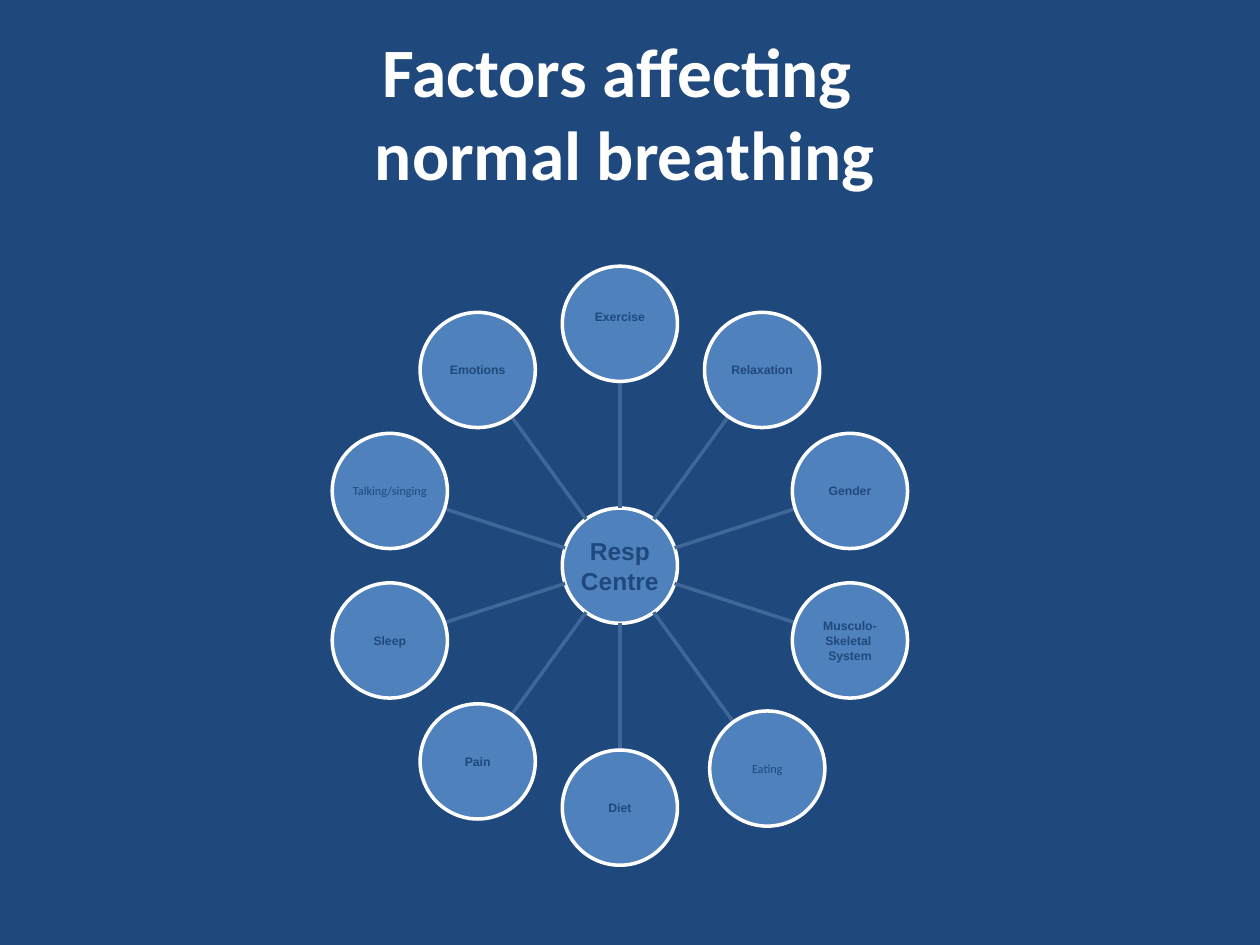
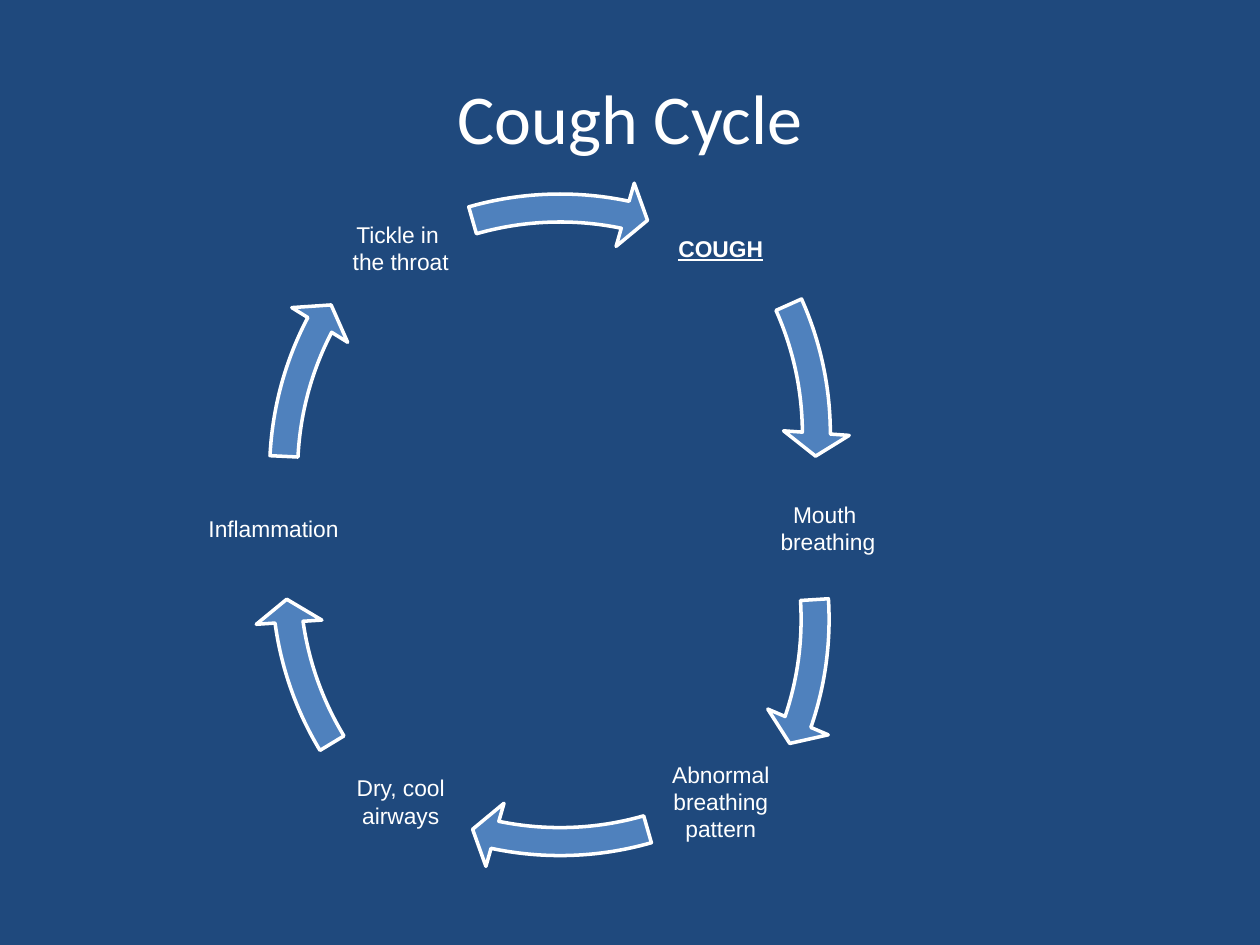
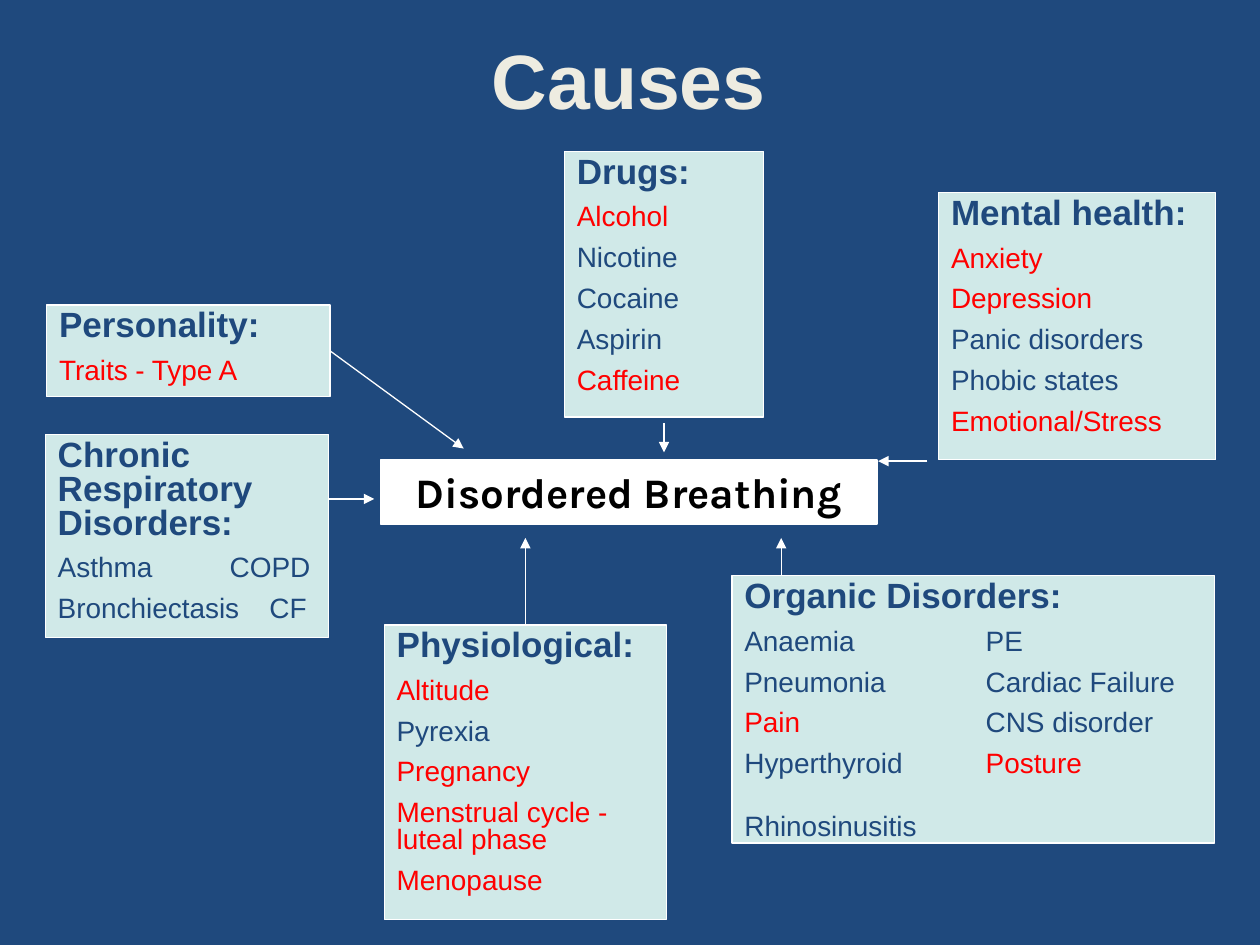
import math

from lxml import etree
from pptx import Presentation, util as u
from pptx.dml.color import RGBColor
from pptx.enum import shapes, text
from pptx.oxml.ns import qn

CELL = u.Inches(0.1)
COLUMNS, ROWS = 100, 75

NAVY = RGBColor(0x1F, 0x49, 0x7D)
BLUE = RGBColor(0x4F, 0x81, 0xBD)
SPOKE = RGBColor(0x3F, 0x67, 0x97)
MINT = RGBColor(0xD0, 0xE9, 0xE8)
CREAM = RGBColor(0xEE, 0xEC, 0xE1)
RED = RGBColor(0xFF, 0x00, 0x00)
WHITE = RGBColor(0xFF, 0xFF, 0xFF)
BLACK = RGBColor(0x00, 0x00, 0x00)

HUB_X, HUB_Y, HUB_DISTANCE, DISC_RADIUS = 49.2, 44.9, 19.2, 4.57
FACTORS = ["Exercise", "Relaxation", "Gender", "Musculo-\nSkeletal \nSystem", "Eating",
           "Diet", "Pain", "Sleep", "Talking/singing", "Emotions"]
LIGHT_FACTORS = {"Eating", "Talking/singing"}
FACTOR_DISTANCES = {"Eating": 19.9}

STAGE_SIZE, RING_SIZE = 11.4, 55.5
STAGES = [("COUGH", 51.5, 14), ("Mouth \nbreathing", 60, 36.2),
          ("Abnormal\nbreathing\npattern", 51.5, 57.9), ("Dry, cool\nairways", 26.1, 57.9),
          ("Inflammation", 16, 36.2), ("Tickle in \nthe throat", 26.1, 14)]
RING_ARROWS = [(11.9, 6.7, 335.9, 359.83), (11.8, 21.4, 356.44, 18.91),
               (16.7, 13.9, 73.97, 101.86), (20.1, 18.2, 148.78, 172.16),
               (19.9, 9.7, 182.8, 207.63), (16.7, 13.9, 253.97, 281.86)]

CAUSES = [
    ("Drugs:", (44.8, 12, 15.8, 21.1),
     ["Alcohol", "Nicotine", "Cocaine", "Aspirin", "Caffeine"]),
    ("Mental health:", (74.5, 15.3, 22, 21.2),
     ["Anxiety", "Depression", "Panic disorders", "Phobic states", "Emotional/Stress"]),
    ("Physiological:", (30.5, 49.6, 22.4, 23.4),
     ["Altitude", "Pyrexia", "Pregnancy", "Menstrual cycle - luteal phase", "Menopause"]),
    ("Personality:", (3.7, 24.2, 22.5, 7.3), ["Traits - Type A"]),
    ("Chronic Respiratory Disorders:", (3.6, 34.5, 22.5, 16.1),
     ["Asthma\tCOPD", "Bronchiectasis\tCF"]),
    ("Organic Disorders:", (58.1, 45.7, 38.3, 21.2),
     ["Anaemia\tPE", "Pneumonia\tCardiac Failure", "Pain\tCNS disorder",
      "Hyperthyroid\tPosture", "Rhinosinusitis"]),
]
HIGHLIGHTS = {"Alcohol", "Caffeine", "Anxiety", "Depression", "Emotional/Stress", "Altitude",
              "Pregnancy", "Menstrual cycle - luteal phase", "Menopause", "Traits - Type A",
              "Pain", "Posture"}
SECOND_COLUMNS = {"Asthma\tCOPD": 13.65, "Bronchiectasis\tCF": 16.8}
ORGANIC_COLUMN = 19.15
ITEM_GAP, LAST_GROUP_GAP = 8, 20.5


def grid(*cells):
    return [u.Emu(round(cell * CELL)) for cell in cells]


def write(frame, content, size=16, font="Arial", color=NAVY, bold=False, underline=False,
          align=text.PP_ALIGN.CENTER, line_spacing=None, space_before=0, tab=None,
          highlights=()):
    for line in content.split("\n"):
        paragraph = frame.paragraphs[-1]
        if paragraph.runs:
            paragraph = frame.add_paragraph()
        paragraph.alignment = align
        paragraph.space_before = u.Pt(space_before)
        if line_spacing:
            paragraph.line_spacing = line_spacing
        if tab:
            stops = etree.SubElement(paragraph._p.get_or_add_pPr(), qn("a:tabLst"))
            etree.SubElement(stops, qn("a:tab"), pos=str(grid(tab)[0]), algn="l")
        for index, part in enumerate(line.split("\t")):
            run = paragraph.add_run()
            run.text = "\t" + part if index else part
            run.font.size = u.Pt(size)
            run.font.name = font
            run.font.bold = bold
            run.font.underline = underline
            run.font.color.rgb = RED if part in highlights else color


def set_frame(frame, anchor=text.MSO_ANCHOR.MIDDLE, insets=(1, 0.5, 1, 0.5), wrap=True):
    frame.auto_size = text.MSO_AUTO_SIZE.NONE
    frame.word_wrap = wrap
    frame.vertical_anchor = anchor
    (frame.margin_left, frame.margin_top,
     frame.margin_right, frame.margin_bottom) = grid(*insets)


def add_titled_slide(presentation, title, box, anchor=text.MSO_ANCHOR.MIDDLE,
                     insets=(1, 0.5, 1, 0.5), **style):
    slide = presentation.slides.add_slide(presentation.slide_layouts.get_by_name("Title Only"))
    shape = slide.shapes.title
    shape.left, shape.top, shape.width, shape.height = grid(*box)
    set_frame(shape.text_frame, anchor, insets)
    write(shape.text_frame, title, **style)
    return slide


def add_filled(slide, kind, box, fill, line_width):
    shape = slide.shapes.add_shape(kind, *grid(*box))
    shape.shadow.inherit = False
    shape.fill.solid()
    shape.fill.fore_color.rgb = fill
    shape.line.color.rgb = WHITE
    shape.line.width = u.Pt(line_width)
    return shape


def add_line(slide, begin, end, color, width, arrow=False):
    connector = slide.shapes.add_connector(
        shapes.MSO_CONNECTOR.STRAIGHT, *grid(*begin, *end))
    connector.line.color.rgb = color
    connector.line.width = u.Pt(width)
    if arrow:
        etree.SubElement(connector.line._get_or_add_ln(), qn("a:tailEnd"), type="triangle")
    etree.SubElement(connector._element.spPr, qn("a:effectLst"))
    return connector


def add_disc(slide, center, label, lift=0, **style):
    box = (center[0] - DISC_RADIUS, center[1] - DISC_RADIUS, 2 * DISC_RADIUS, 2 * DISC_RADIUS)
    disc = add_filled(slide, shapes.MSO_SHAPE.OVAL, box, BLUE, 2)
    set_frame(disc.text_frame, insets=(0, 0, 0, lift), wrap=False)
    write(disc.text_frame, label, **style)


def from_hub(angle, distance):
    return HUB_X + distance * math.cos(angle), HUB_Y + distance * math.sin(angle)


def add_factor(slide, index, factor):
    angle = math.radians(360 / len(FACTORS) * index - 90)
    distance = FACTOR_DISTANCES.get(factor, HUB_DISTANCE)
    add_line(slide, from_hub(angle, DISC_RADIUS), from_hub(angle, distance - DISC_RADIUS),
             SPOKE, 2)
    light = factor in LIGHT_FACTORS
    add_disc(slide, from_hub(angle, distance), factor, lift=1.1 if index == 0 else 0, size=7,
             font="Calibri" if light else "Arial", bold=not light)


def add_stage(slide, label, left, top):
    box = slide.shapes.add_textbox(*grid(left, top, STAGE_SIZE, STAGE_SIZE))
    set_frame(box.text_frame, insets=(0.2, 0.2, 0.2, 0.2))
    is_cough = label == "COUGH"
    write(box.text_frame, label, size=13, color=WHITE, bold=is_cough, underline=is_cough)


def add_ring_arrow(slide, left, top, start, end):
    arrow = add_filled(slide, shapes.MSO_SHAPE.CIRCULAR_ARROW,
                       (left, top, RING_SIZE, RING_SIZE), BLUE, 2)
    values = (0.04, 2.5, end * 0.6, start * 0.6, 0.047)
    for index, value in enumerate(values):
        arrow.adjustments[index] = value


def add_cause(slide, heading, box, items):
    card = add_filled(slide, shapes.MSO_SHAPE.RECTANGLE, box, MINT, 0.75)
    frame = card.text_frame
    set_frame(frame, text.MSO_ANCHOR.TOP)
    style = dict(align=text.PP_ALIGN.LEFT, line_spacing=0.8)
    write(frame, heading, size=20, bold=True, **style)
    for item in items:
        tab = SECOND_COLUMNS.get(item, ORGANIC_COLUMN) if "\t" in item else None
        gap = LAST_GROUP_GAP if item == "Rhinosinusitis" else ITEM_GAP
        write(frame, item, space_before=gap, tab=tab, highlights=HIGHLIGHTS, **style)
    return card


def build_factors(presentation):
    slide = add_titled_slide(presentation, "Factors affecting \nnormal breathing",
                             (10.2, 3, 78.8, 12.4), text.MSO_ANCHOR.BOTTOM, (0, 0.5, 0, 0),
                             size=39.6, font="Calibri", color=WHITE, bold=True)
    add_disc(slide, (HUB_X, HUB_Y), "Resp\nCentre", size=14, bold=True)
    for index, factor in enumerate(FACTORS):
        add_factor(slide, index, factor)


def build_cough_cycle(presentation):
    slide = add_titled_slide(presentation, "Cough Cycle", (5, 3, 90, 12.5),
                             size=40, font="Calibri", color=WHITE)
    for stage, arrow in zip(STAGES, RING_ARROWS):
        add_stage(slide, *stage)
        add_ring_arrow(slide, *arrow)


def build_causes(presentation):
    slide = add_titled_slide(presentation, "Causes", (22.4, 2.1, 55, 8.3),
                             size=44, color=CREAM, bold=True)
    center = add_filled(slide, shapes.MSO_SHAPE.RECTANGLE, (30.2, 36.5, 39.4, 5.1), WHITE, 0.75)
    set_frame(center.text_frame)
    write(center.text_frame, "Disordered Breathing", size=24, font="Karla", color=BLACK,
          bold=True)
    cards = {cause[0]: add_cause(slide, *cause) for cause in CAUSES}
    for begin, end in [((26.1, 39.6), (29.7, 39.6)), ((73.6, 36.6), (69.7, 36.6)),
                       ((52.7, 33.6), (52.7, 35.9)), ((62, 45.7), (62, 42.7))]:
        add_line(slide, begin, end, WHITE, 0.75, arrow=True)
    for heading, side, begin, end in [("Personality:", 3, (26.2, 27.85), (36.8, 35.6)),
                                      ("Physiological:", 0, (41.7, 49.6), (41.7, 42.7))]:
        arrow = add_line(slide, begin, end, WHITE, 0.75, arrow=True)
        arrow.begin_connect(cards[heading], side)


def main():
    presentation = Presentation()
    presentation.slide_width, presentation.slide_height = grid(COLUMNS, ROWS)
    background = presentation.slide_master.background.fill
    background.solid()
    background.fore_color.rgb = NAVY
    build_factors(presentation)
    build_cough_cycle(presentation)
    build_causes(presentation)
    presentation.save("out.pptx")


if __name__ == "__main__":
    main()
